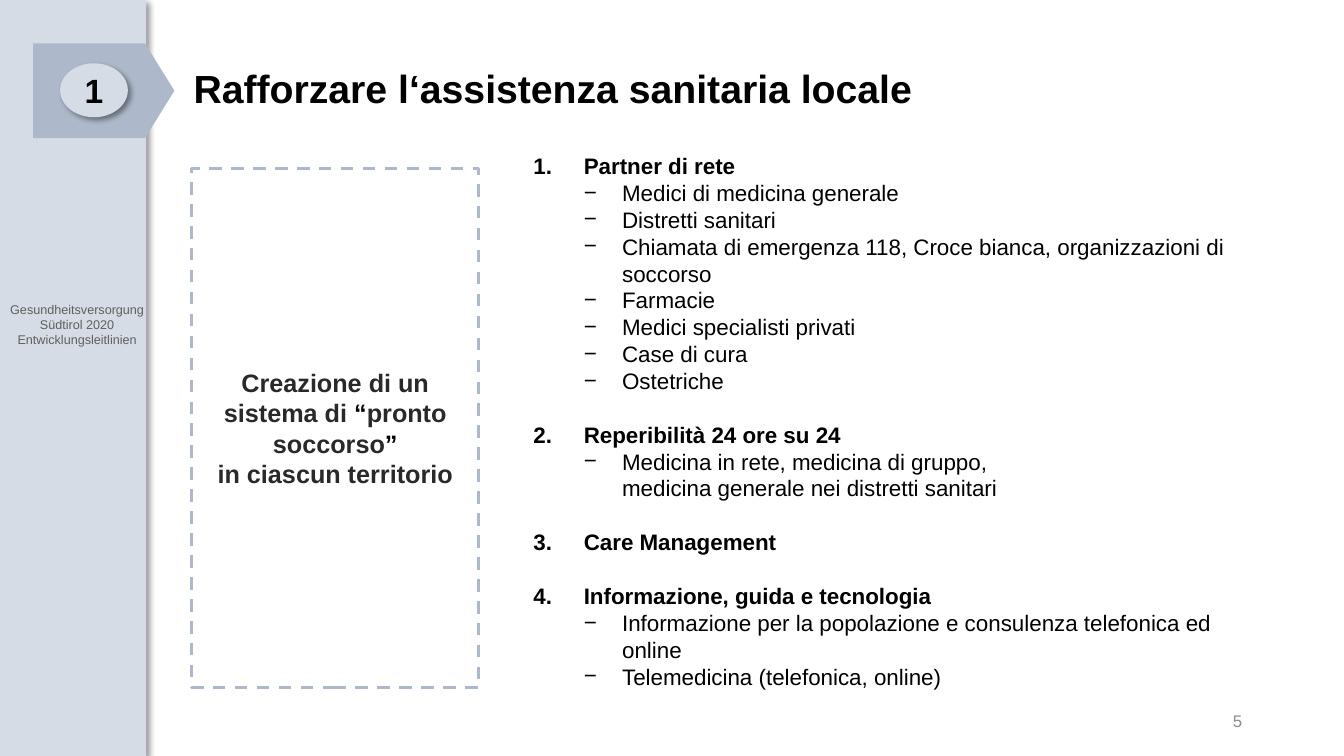
from collections import namedtuple
from dataclasses import dataclass

from lxml.etree import SubElement
from pptx import Presentation
from pptx.dml.color import RGBColor as Rgb
from pptx.enum.dml import MSO_LINE as Dash
from pptx.enum.shapes import MSO_SHAPE as Kind
from pptx.enum.text import MSO_ANCHOR as Anchor, MSO_AUTO_SIZE as Fit, PP_ALIGN as Align
from pptx.oxml.ns import qn
from pptx.util import Inches, Pt


@dataclass(frozen=True)
class Theme:
    font: str = "Arial"
    ink: str = "000000"
    soft: str = "292929"
    label: str = "5F5F5F"
    page: str = "8C8C8C"
    pale: str = "D6DCE5"
    blue: str = "ADB9CA"
    head: int = 28
    mark: int = 24
    claim: int = 18
    body: int = 16
    foot: int = 12
    small: int = 9


class Box(namedtuple("Box", "x y w h")):
    def inner(self, x, y, w, h):
        """Return an inner box given as shares of this one."""
        return Box(self.x + x * self.w, self.y + y * self.h, w * self.w, h * self.h)

    def emu(self):
        return [Inches(side) for side in self]


LOOK = Theme()
PAGE = Box(0, 0, 13.33, 7.5)
TOPICS = [
    ("Partner di rete", [
        "Medici di medicina generale",
        "Distretti sanitari",
        "Chiamata di emergenza 118, Croce bianca, organizzazioni di soccorso",
        "Farmacie",
        "Medici specialisti privati",
        "Case di cura",
        "Ostetriche",
    ]),
    ("Reperibilità 24 ore su 24", [
        "Medicina in rete, medicina di gruppo, \nmedicina generale nei distretti sanitari",
    ]),
    ("Care Management", []),
    ("Informazione, guida e tecnologia", [
        "Informazione per la popolazione e consulenza telefonica ed online",
        "Telemedicina (telefonica, online)",
    ]),
]


def write(par, text, size, color=LOOK.ink, bold=False, align=Align.LEFT):
    """Append text to a paragraph; a newline becomes a line break."""
    par.alignment = align
    for i, line in enumerate(text.split("\n")):
        if i:
            par.add_line_break()
        if line:
            run = par.add_run()
            run.text = line
            font = run.font
            font.name, font.size, font.bold = LOOK.font, Pt(size), bold
            font.color.rgb = Rgb.from_string(color)


def setup(frame, anchor=Anchor.TOP):
    frame.word_wrap = True
    frame.auto_size = Fit.NONE
    frame.vertical_anchor = anchor
    return frame


def place(shape, box):
    shape.left, shape.top, shape.width, shape.height = box.emu()


def draw(slide, kind, box, fill=None, shade=False):
    shape = slide.shapes.add_shape(kind, *box.emu())
    shape.shadow.inherit = False
    shape.line.fill.background()
    if fill:
        shape.fill.solid()
        shape.fill.fore_color.rgb = Rgb.from_string(fill)
    else:
        shape.fill.background()
    if shade:
        effect = shape.element.spPr.find(qn("a:effectLst"))
        outer = SubElement(effect, qn("a:outerShdw"), blurRad=str(Pt(4)), dist=str(Pt(3)),
                           dir="2700000", algn="tl", rotWithShape="0")
        tint = SubElement(outer, qn("a:srgbClr"), val=LOOK.ink)
        SubElement(tint, qn("a:alpha"), val="40000")
    return shape


def bullet(par, left, hang, tag, **attrs):
    """Give a paragraph a hanging indent and a bullet element."""
    props = par._p.get_or_add_pPr()
    props.set("marL", str(Inches(left)))
    props.set("indent", str(-Inches(hang)))
    SubElement(props, qn("a:buFont"), typeface=LOOK.font)
    SubElement(props, qn(tag), **attrs)


def sidebar(slide, box):
    draw(slide, Kind.RECTANGLE, box, LOOK.pale, shade=True)
    label = slide.shapes.add_textbox(*box.inner(0, 0.393, 1.055, 0.093).emu())
    frame = setup(label.text_frame)
    frame.margin_left = frame.margin_right = Inches(0.05)
    lines = ["Gesundheitsversorgung Südtirol 2020", "Entwicklungsleitlinien"]
    for i, line in enumerate(lines):
        par = frame.add_paragraph() if i else frame.paragraphs[0]
        write(par, line, LOOK.small, LOOK.label, align=Align.CENTER)


def badge(slide, box):
    arrow = draw(slide, Kind.PENTAGON, box, LOOK.blue)
    arrow.adjustments[0] = 0.31
    disc = draw(slide, Kind.OVAL, box.inner(0.19, 0.21, 0.48, 0.57), LOOK.pale, shade=True)
    frame = setup(disc.text_frame, Anchor.MIDDLE)
    write(frame.paragraphs[0], "1", LOOK.mark, bold=True, align=Align.CENTER)


def heading(slide, box):
    title = slide.shapes.title
    place(title, box)
    par = setup(title.text_frame, Anchor.MIDDLE).paragraphs[0]
    par.line_spacing = 0.9
    write(par, "Rafforzare l‘assistenza sanitaria locale", LOOK.head, bold=True)


def claim(slide, box):
    panel = draw(slide, Kind.RECTANGLE, box)
    panel.line.color.rgb = Rgb.from_string(LOOK.blue)
    panel.line.width = Pt(2.25)
    panel.line.dash_style = Dash.DASH
    par = setup(panel.text_frame, Anchor.MIDDLE).paragraphs[0]
    for text, color in [
        ("Creazione di un sistema di ", LOOK.soft),
        ("“", LOOK.ink),
        ("pronto soccorso", LOOK.soft),
        ("”\n", LOOK.ink),
        ("in ciascun territorio", LOOK.soft),
    ]:
        write(par, text, LOOK.claim, color, bold=True, align=Align.CENTER)


def topics(slide, box):
    body = slide.placeholders[1]
    place(body, box)
    frame = setup(body.text_frame)
    for num, (topic, points) in enumerate(TOPICS, 1):
        par = frame.add_paragraph() if num > 1 else frame.paragraphs[0]
        bullet(par, 0.5, 0.5, "a:buAutoNum", type="arabicPeriod", startAt=str(num))
        par.space_before = Pt(1.2 * LOOK.body if num > 1 else 0)
        write(par, topic, LOOK.body, bold=True)
        for point in points:
            par = frame.add_paragraph()
            par.level = 1
            bullet(par, 0.88, 0.38, "a:buChar", char="−")
            par.space_before = Pt(0)
            write(par, point, LOOK.body)


def number(slide, box):
    label = slide.shapes.add_textbox(*box.emu())
    par = setup(label.text_frame, Anchor.MIDDLE).paragraphs[0]
    write(par, "5", LOOK.foot, LOOK.page, align=Align.RIGHT)


def main():
    deck = Presentation()
    deck.slide_width, deck.slide_height = PAGE.emu()[2:]
    slide = deck.slides.add_slide(deck.slide_layouts[1])
    sidebar(slide, Box(0, 0, 1.45, PAGE.h))
    badge(slide, Box(0.33, 0.43, 1.4, 0.94))
    heading(slide, Box(1.82, 0.39, 10.68, 1.03))
    claim(slide, Box(1.9, 1.67, 2.85, 5.15))
    topics(slide, Box(5.19, 1.46, 7.22, 5.72))
    number(slide, Box(9.42, 6.95, 3, 0.4))
    deck.save("out.pptx")


if __name__ == "__main__":
    main()
